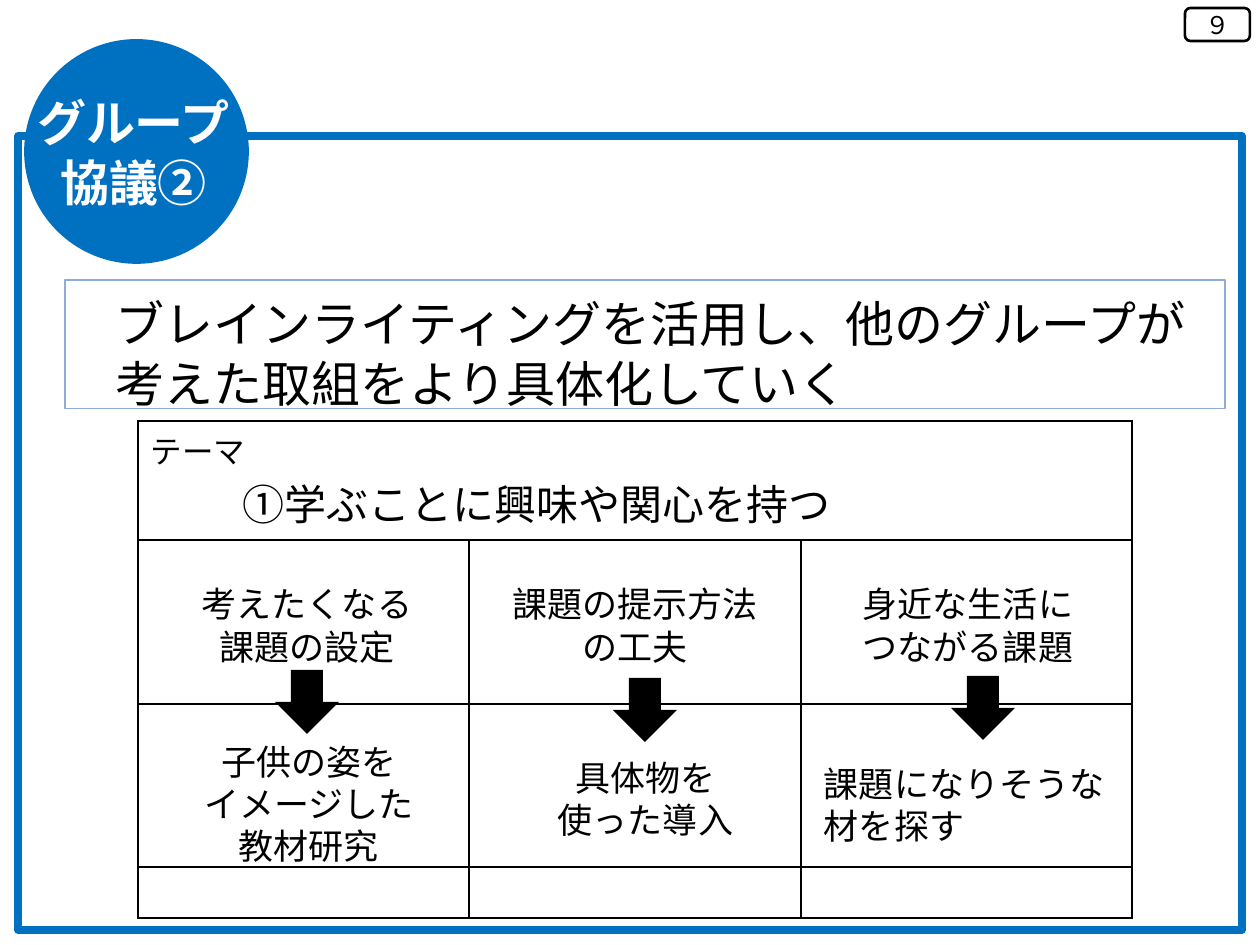
import pptx
import pptx.util
from lxml import etree
from pptx.dml.color import RGBColor
from pptx.enum.shapes import MSO_SHAPE
from pptx.enum.text import MSO_ANCHOR, MSO_AUTO_SIZE, PP_ALIGN
from pptx.oxml.ns import qn

EMU_PER_PX = 914400 / 126
FONT = "Noto Sans CJK JP"
BLUE, BLACK, WHITE = "0070C0", "000000", "FFFFFF"
LINE_PITCH = 1.2

CELL_FRAMES = [
    # text, left, top, width, height, alignment
    ("考えたくなる\n課題の設定", 156, 578, 301, 126, PP_ALIGN.CENTER),
    ("課題の提示方法\nの工夫", 472, 578, 325, 126, PP_ALIGN.CENTER),
    ("身近な生活に\nつながる課題", 819, 578, 297, 126, PP_ALIGN.CENTER),
    ("子供の姿を\nイメージした\n教材研究", 139, 735, 339, 169, PP_ALIGN.CENTER),
    ("具体物を\n使った導入", 471, 752, 348, 126, PP_ALIGN.CENTER),
    ("課題になりそうな\n材を探す", 811, 757, 312, 97, PP_ALIGN.LEFT),
]


def px(length):
    return pptx.util.Emu(round(length * EMU_PER_PX))


def color(value):
    return RGBColor.from_string(value)


def set_values(target, values):
    for name, value in values.items():
        setattr(target, name, value)


def place(shape, left, top, width, height):
    set_values(shape, {"left": px(left), "top": px(top),
                       "width": px(width), "height": px(height)})


def write(frame, text, size, ink=BLACK, bold=False, align=PP_ALIGN.LEFT, pitch=LINE_PITCH):
    """Write one paragraph per line; a pitch of None keeps natural line spacing."""
    frame.text = text
    for paragraph in frame.paragraphs:
        paragraph.alignment = align
        if pitch:
            paragraph.line_spacing = pptx.util.Pt(round(size * pitch))
        for run in paragraph.runs:
            set_values(run.font, {"size": pptx.util.Pt(size), "bold": bold, "name": FONT})
            run.font.color.rgb = color(ink)
            east_asian = etree.SubElement(run.font._element, qn("a:ea"))
            east_asian.set("typeface", FONT)


def format_frame(frame):
    set_values(frame, {"word_wrap": True, "auto_size": MSO_AUTO_SIZE.NONE,
                       "vertical_anchor": MSO_ANCHOR.TOP,
                       "margin_left": px(13), "margin_right": px(12),
                       "margin_top": px(5), "margin_bottom": px(5)})


def add_text(slide, text, box, size, **style):
    text_box = slide.shapes.add_textbox(*map(px, box))
    format_frame(text_box.text_frame)
    write(text_box.text_frame, text, size, **style)


def add_shape(slide, kind, box, fill=None, line=None, weight=1):
    shape = slide.shapes.add_shape(kind, *map(px, box))
    shape.shadow.inherit = False
    if fill:
        shape.fill.solid()
        shape.fill.fore_color.rgb = color(fill)
    else:
        shape.fill.background()
    if line:
        shape.line.color.rgb = color(line)
        shape.line.width = pptx.util.Pt(weight)
    else:
        shape.line.fill.background()
    return shape


def add_border(cell):
    properties = cell._tc.get_or_add_tcPr()
    for position, side in enumerate(("lnL", "lnR", "lnT", "lnB")):
        line = etree.Element(qn(f"a:{side}"), w=str(pptx.util.Pt(1)))
        fill = etree.SubElement(line, qn("a:solidFill"))
        etree.SubElement(fill, qn("a:srgbClr"), val=BLACK)
        properties.insert(position, line)


def add_theme_table(slide):
    row_heights, column_widths = (119, 164, 163, 51), (331, 332, 331)
    table = slide.shapes.add_table(
        len(row_heights), len(column_widths), px(138), px(421),
        px(sum(column_widths)), px(sum(row_heights))).table
    for row, height in zip(table.rows, row_heights):
        row.height = px(height)
    for column, width in zip(table.columns, column_widths):
        column.width = px(width)
    for cell in table.iter_cells():
        cell.fill.solid()
        cell.fill.fore_color.rgb = color(WHITE)
        add_border(cell)
    theme = table.cell(0, 0)
    theme.merge(table.cell(0, 2))
    write(theme.text_frame, "テーマ", 18, pitch=None)


def add_title_badge(slide):
    circle = add_shape(slide, MSO_SHAPE.OVAL, (25, 40, 223, 223), BLUE, BLUE)
    title = slide.shapes.title
    place(title, 10, 87, 246, 131)
    format_frame(title.text_frame)
    write(title.text_frame, "グループ\n協議②", 28, WHITE, True, PP_ALIGN.CENTER)
    # Bring the title in front of its circle
    circle._element.addnext(title._element)


def add_page_number(slide):
    badge = add_shape(slide, MSO_SHAPE.ROUNDED_RECTANGLE, (1185, 8, 65, 33),
                      WHITE, BLACK, 1.5)
    set_values(badge.text_frame, {"margin_top": 0, "margin_bottom": 0,
                                  "vertical_anchor": MSO_ANCHOR.MIDDLE})
    write(badge.text_frame, "９", 14, align=PP_ALIGN.CENTER, pitch=None)


def main():
    presentation = pptx.Presentation()
    set_values(presentation, {"slide_width": px(1260), "slide_height": px(945)})
    slide = presentation.slides.add_slide(presentation.slide_layouts[5])

    # Frames, title and page number
    add_shape(slide, MSO_SHAPE.RECTANGLE, (65, 280, 1160, 129), line="8FAADC", weight=0.75)
    add_shape(slide, MSO_SHAPE.RECTANGLE, (18, 136, 1224, 794), line=BLUE, weight=4.5)
    add_title_badge(slide)
    add_page_number(slide)

    # Aim of the discussion
    add_text(slide, "ブレインライティングを活用し、他のグループが\n考えた取組をより具体化していく",
             (103, 288, 1220, 131), 28)

    # Theme table with ideas and their next steps
    add_theme_table(slide)
    add_text(slide, "①学ぶことに興味や関心を持つ", (230, 473, 629, 64), 24)
    for text, left, top, width, height, align in CELL_FRAMES:
        add_text(slide, text, (left, top, width, height), 20, align=align)
    for column, top in enumerate((670, 678, 676)):
        add_shape(slide, MSO_SHAPE.DOWN_ARROW, (275 + 338 * column, top, 64, 64), BLACK)

    presentation.save("out.pptx")


if __name__ == "__main__":
    main()
